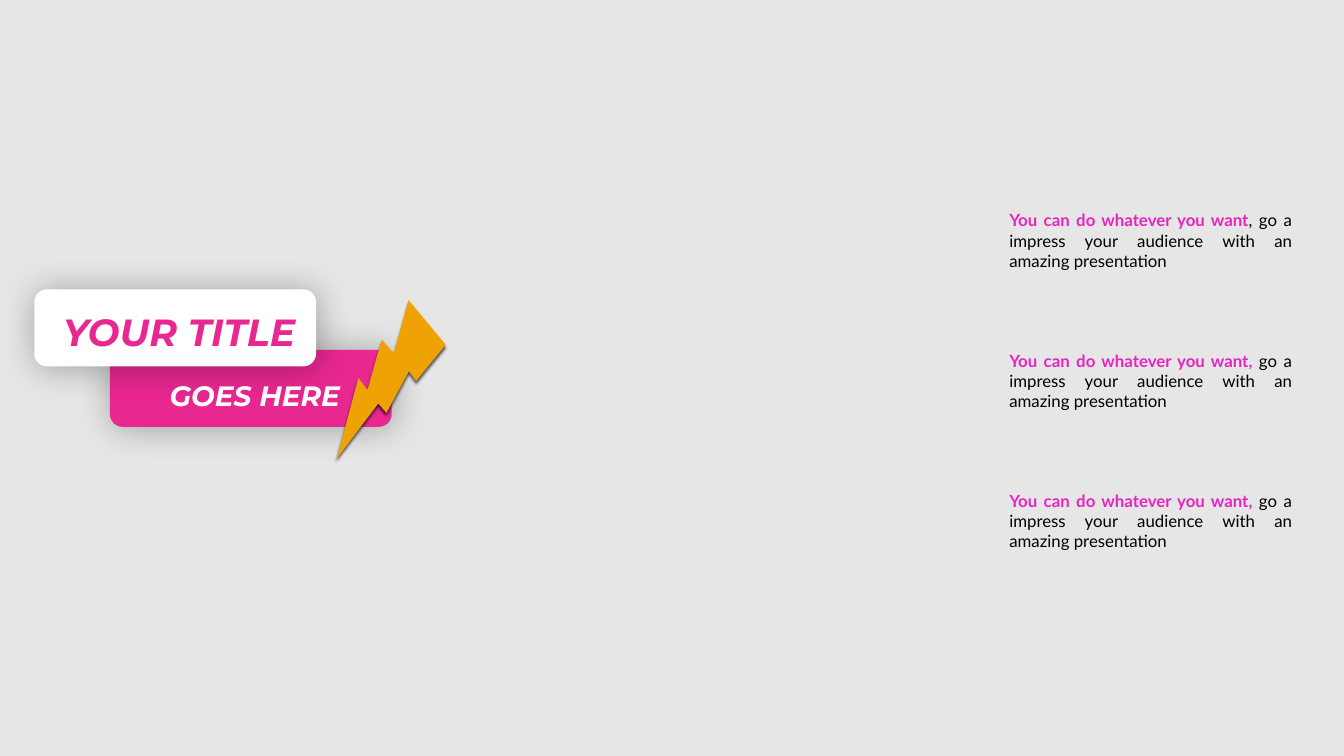
from pptx import Presentation
from pptx.dml.color import RGBColor
from pptx.enum import shapes, text
from pptx.oxml import parse_xml
from pptx.oxml.ns import nsdecls, qn
from pptx.util import Inches, Pt

PINK, WHITE, BLACK, GOLD, MAGENTA = "E82791", "FFFFFF", "000000", "EFA203", "E824C0"
BACKGROUND = "E7E6E6"

TITLE = "YOUR TITLE"
SUBTITLE = "GOES HERE"
NOTES = [
    ("You can do whatever you want", ", go a impress your audience with an amazing presentation"),
    ("You can do whatever you want, ", "go a impress your audience with an amazing presentation"),
    ("You can do whatever you want, ", "go a impress your audience with an amazing presentation"),
]
NOTE_LEFT, NOTE_TOP, NOTE_STEP = 19.82, 4.07, 2.78
NOTE_SIZE = (6.01, 1.84)

CARD_SIZE = (5.59, 1.53)
SOFT_SHADOW = dict(opacity=31, blur=50.4, distance=3, angle=45)
CRISP_SHADOW = dict(opacity=64, blur=4, distance=4, angle=90)


def rgb(color):
    return RGBColor.from_string(color)


def place(shape, left, top, width, height):
    box = dict(left=left, top=top, width=width, height=height)
    for name, value in box.items():
        setattr(shape, name, Inches(value))


def add_shadow(shape, opacity, blur, distance, angle):
    """Replace the theme shadow with a black outer shadow; lengths in points."""
    shape.shadow.inherit = False
    shape._element.spPr.find(qn("a:effectLst")).append(parse_xml(
        f'<a:outerShdw {nsdecls("a")} blurRad="{Pt(blur)}" dist="{Pt(distance)}" '
        f'dir="{angle * 60000}" algn="ctr" rotWithShape="0">'
        f'<a:srgbClr val="{BLACK}"><a:alpha val="{opacity * 1000}"/></a:srgbClr>'
        f'</a:outerShdw>'))


def add_figure(slide, preset, box, color, shadow):
    figure = slide.shapes.add_shape(preset, *map(Inches, box))
    figure.fill.solid()
    figure.fill.fore_color.rgb = rgb(color)
    figure.line.fill.background()
    add_shadow(figure, **shadow)
    return figure


def write(shape, runs, align, inset=(0.1, 0.05)):
    """Fill a shape with one paragraph of (wording, colour, font format) runs."""
    frame = shape.text_frame
    side, edge = map(Inches, inset)
    layout = dict(word_wrap=True, auto_size=text.MSO_AUTO_SIZE.NONE,
                  vertical_anchor=text.MSO_ANCHOR.TOP, margin_left=side,
                  margin_right=side, margin_top=edge, margin_bottom=edge)
    for name, value in layout.items():
        setattr(frame, name, value)
    paragraph = frame.paragraphs[0]
    paragraph.alignment = align
    for wording, color, style in runs:
        run = paragraph.add_run()
        run.text = wording
        run.font.color.rgb = rgb(color)
        for name, value in style.items():
            setattr(run.font, name, value)


def heading_style(size):
    return dict(name="Montserrat", size=Pt(size), bold=True, italic=True)


def note_style(bold):
    return dict(name="Lato", size=Pt(24), bold=bold)


def main():
    deck = Presentation()
    deck.slide_width, deck.slide_height = Inches(26.66), Inches(15)
    slide = deck.slides.add_slide(deck.slide_layouts[5])
    slide.background.fill.solid()
    slide.background.fill.fore_color.rgb = rgb(BACKGROUND)

    for row, (lead, rest) in enumerate(NOTES):
        note = slide.shapes.add_textbox(0, 0, 0, 0)
        place(note, NOTE_LEFT, NOTE_TOP + row * NOTE_STEP, *NOTE_SIZE)
        write(note, [(lead, MAGENTA, note_style(True)), (rest, BLACK, note_style(False))],
              text.PP_ALIGN.JUSTIFY, inset=(0.2, 0.1))

    rounded = shapes.MSO_SHAPE.ROUNDED_RECTANGLE
    add_figure(slide, rounded, (2.18, 6.94, *CARD_SIZE), PINK, SOFT_SHADOW)
    subtitle = slide.shapes.add_textbox(0, 0, 0, 0)
    place(subtitle, 2.43, 7.46, 5.25, 0.77)
    write(subtitle, [(SUBTITLE, WHITE, heading_style(40))], text.PP_ALIGN.CENTER)

    title_card = add_figure(slide, rounded, (0.68, 5.74, *CARD_SIZE), WHITE, SOFT_SHADOW)
    title = slide.shapes.title
    place(title, 0.93, 6.08, 5.25, 1.01)
    write(title, [(TITLE, PINK, heading_style(54))], text.PP_ALIGN.CENTER)
    title_card._element.addnext(title._element)  # the title sits in front of its card

    bolt = add_figure(slide, shapes.MSO_SHAPE.LIGHTNING_BOLT, (6.29, 6.13, 2.67, 2.67),
                      GOLD, CRISP_SHADOW)
    bolt.rotation = 75

    deck.save("out.pptx")


if __name__ == "__main__":
    main()
